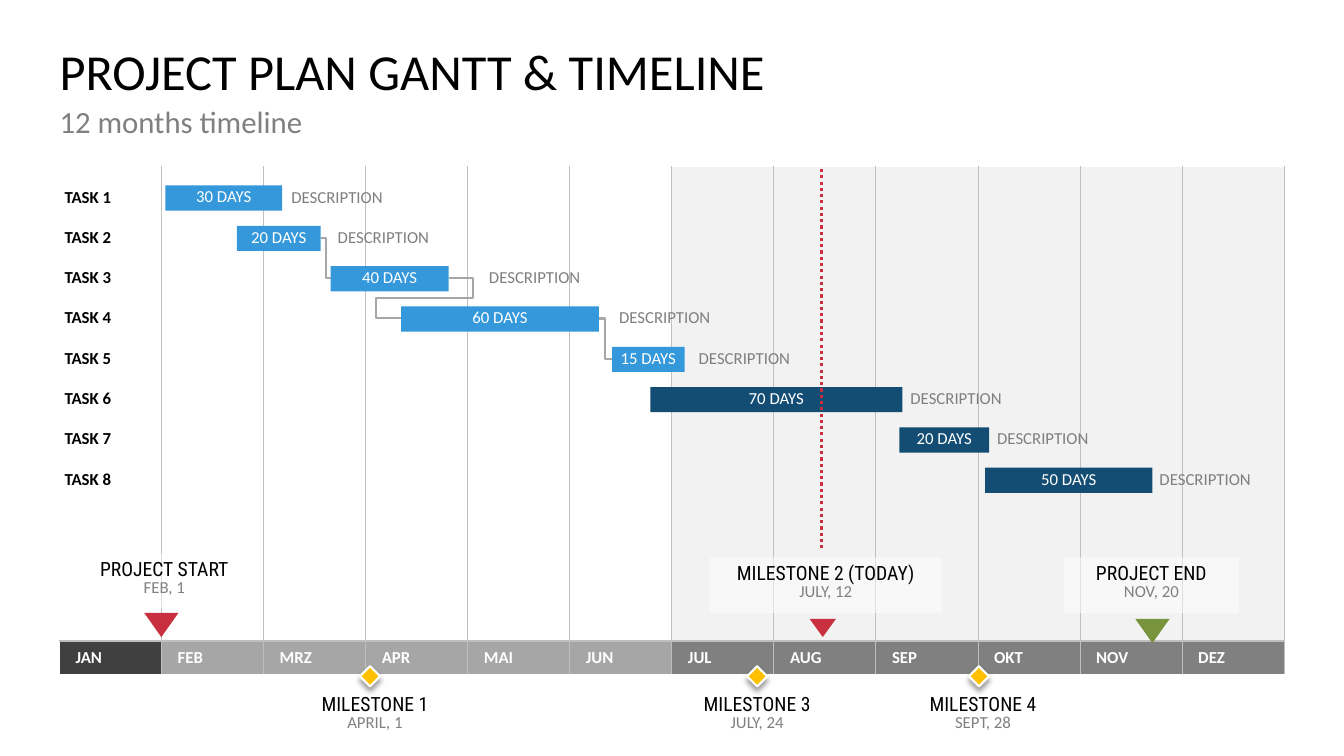
from lxml.etree import SubElement, fromstring
from pptx import Presentation
from pptx.dml.color import RGBColor
from pptx.enum.dml import MSO_LINE
from pptx.enum.shapes import MSO_CONNECTOR, MSO_SHAPE
from pptx.enum.text import MSO_ANCHOR, MSO_AUTO_SIZE, PP_ALIGN
from pptx.oxml.ns import nsdecls, qn
from pptx.util import Inches, Pt

COLORS = {
    "black": "000000", "white": "FFFFFF", "gray": "808080", "desc": "7F7F7F",
    "border": "BFBFBF", "link": "A6A6A6", "shade": "F2F2F2",
    "jan": "404040", "half1": "A6A6A6", "half2": "808080",
    "blue": "3498DB", "navy": "144D73",
    "red": "C8303F", "green": "77933C", "amber": "FFC000",
}
C = {name: RGBColor.from_string(value) for name, value in COLORS.items()}

prs = Presentation()
prs.slide_width, prs.slide_height = Inches(13.33), Inches(7.5)
s = prs.slides.add_slide(prs.slide_layouts[5])


def write(tf, lines, align=PP_ALIGN.LEFT, anchor=MSO_ANCHOR.TOP,
          spacing=0.9, after=10, margins=(0, 0, 0, 0), wrap=True):
    """Fill a frame with lines of (text, size, colour, bold, font)."""
    tf.auto_size = MSO_AUTO_SIZE.NONE
    tf.word_wrap = wrap
    tf.vertical_anchor = anchor
    tf.margin_left, tf.margin_top, tf.margin_right, tf.margin_bottom = map(Inches, margins)
    p = tf.paragraphs[0]
    p.text = "\v".join(line[0] for line in lines)
    p.alignment, p.line_spacing, p.space_after = align, spacing, Pt(after)
    for r, (_, size, color, bold, font) in zip(p.runs, lines):
        r.font.size, r.font.bold, r.font.name = Pt(size), bold, font
        r.font.color.rgb = C[color]
    for br in p._p.findall(qn("a:br")):
        SubElement(br, qn("a:rPr")).set("sz", str(lines[0][1] * 100))


def add_box(kind, left, top, width, height, fill=None):
    sp = s.shapes.add_shape(kind, Inches(left), Inches(top), Inches(width), Inches(height))
    sp.shadow.inherit = False
    sp.line.fill.background()
    if fill:
        sp.fill.solid()
        sp.fill.fore_color.rgb = C[fill]
    else:
        sp.fill.background()
    return sp


# Title and subtitle
title = s.shapes.title
title.left, title.top, title.width, title.height = map(Inches, (0.59, 0.47, 12.15, 1.18))
write(title.text_frame, [("PROJECT PLAN GANTT & TIMELINE", 36, "black", False, "Calibri")], after=0)
subtitle = s.shapes.add_textbox(Inches(0.59), Inches(1.06), Inches(12.15), Inches(0.59))
write(subtitle.text_frame, [("12 months timeline", 22, "gray", False, "Calibri")])

# Calendar table: a tall grid row above the month row
months = ["JAN", "FEB", "MRZ", "APR", "MAI", "JUN", "JUL", "AUG", "SEP", "OKT", "NOV", "DEZ"]
frame = s.shapes.add_table(2, len(months), Inches(0.59), Inches(1.65), Inches(12.15), Inches(5.04))
table = frame.table
table.first_row = table.horz_banding = False
table.rows[0].height, table.rows[1].height = Inches(4.71), Inches(0.33)
for col, month in enumerate(months):
    table.columns[col].width = Inches(12.15 / len(months))
    for row in range(2):
        cell = table.cell(row, col)
        if row == 0 and col < 6:
            cell.fill.background()
        else:
            cell.fill.solid()
            band = "jan" if col == 0 else "half1" if col < 6 else "half2"
            cell.fill.fore_color.rgb = C[band if row else "shade"]
        borders = [
            ("lnL", "border" if col else "white", 0.75 if col else 1),
            ("lnR", "border", 0.75),
            ("lnT", "border" if row else "white", 1),
            ("lnB", "white" if row else "border", 1),
        ]
        for i, (tag, color, width) in enumerate(borders):
            cell._tc.get_or_add_tcPr().insert(i, fromstring(
                f'<a:{tag} {nsdecls("a")} w="{Pt(width)}"><a:solidFill>'
                f'<a:srgbClr val="{COLORS[color]}"/></a:solidFill></a:{tag}>'))
    cell.vertical_anchor = MSO_ANCHOR.MIDDLE
    cell.margin_left, cell.margin_top = Inches(0.16), Inches(0.01)
    cell.margin_right, cell.margin_bottom = Inches(0.01), 0
    cell.text_frame.text = month
    r = cell.text_frame.paragraphs[0].runs[0]
    r.font.size, r.font.bold, r.font.name = Pt(12), True, "Calibri"
    r.font.color.rgb = C["white"]

# Markers above the month row
for left, top, width, height, color in [
    (1.43, 6.08, 0.34, 0.24, "red"),
    (8.03, 6.14, 0.26, 0.18, "red"),
    (11.26, 6.14, 0.34, 0.24, "green"),
]:
    marker = add_box(MSO_SHAPE.ISOSCELES_TRIANGLE, left, top, width, height, color)
    marker.rotation = 180

# Half-transparent callouts above the markers
for left, top, width, name, date in [
    (0.76, 5.49, 1.74, "PROJECT START", "FEB, 1"),
    (10.55, 5.53, 1.74, "PROJECT END", "NOV, 20"),
    (7.04, 5.53, 2.3, "MILESTONE 2 (TODAY)", "JULY, 12"),
]:
    callout = add_box(MSO_SHAPE.RECTANGLE, left, top, width, 0.55, "white")
    fill = callout._element.spPr.find(qn("a:solidFill"))
    SubElement(fill[0], qn("a:alpha")).set("val", "50000")
    write(callout.text_frame,
          [(name, 14, "black", False, "Roboto Condensed"), (date, 12, "gray", False, "Calibri")],
          PP_ALIGN.CENTER, MSO_ANCHOR.BOTTOM, 0.8, 0, (0, 0.08, 0, 0.12))

# Milestones below the month row
for text_left, diamond_left, name, date in [
    (2.87, 3.57, "MILESTONE 1", "APRIL, 1"),
    (6.66, 7.41, "MILESTONE 3", "JULY, 24"),
    (8.9, 9.61, "MILESTONE 4", "SEPT, 28"),
]:
    label = s.shapes.add_textbox(Inches(text_left), Inches(6.91), Inches(1.7), Inches(0.35))
    write(label.text_frame,
          [(name, 14, "black", False, "Roboto Condensed"), (date, 12, "gray", False, "Calibri")],
          PP_ALIGN.CENTER, spacing=0.8)
    diamond = add_box(MSO_SHAPE.DIAMOND, diamond_left, 6.61, 0.2, 0.2, "amber")
    diamond.line.color.rgb, diamond.line.width = C["white"], Pt(1.5)
    diamond._element.spPr.find(qn("a:effectLst")).append(fromstring(
        f'<a:outerShdw {nsdecls("a")} blurRad="{Pt(4)}" dist="{Pt(3)}" dir="5400000" '
        'rotWithShape="0"><a:srgbClr val="000000"><a:alpha val="40000"/></a:srgbClr></a:outerShdw>'))

# Task rows: bar left, bar width, days, description left, colour
ROW_TOP, ROW_STEP = 1.8, 0.4
tasks = [
    (1.64, 1.16, 30, 2.89, "blue"),
    (2.35, 0.83, 20, 3.35, "blue"),
    (3.28, 1.17, 40, 4.85, "blue"),
    (3.98, 1.96, 60, 6.14, "blue"),
    (6.07, 0.72, 15, 6.93, "blue"),
    (6.45, 2.5, 70, 9.03, "navy"),
    (8.92, 0.89, 20, 9.89, "navy"),
    (9.77, 1.66, 50, 11.5, "navy"),
]
for i, (left, width, days, desc_left, color) in enumerate(tasks):
    top = ROW_TOP + i * ROW_STEP
    task = add_box(MSO_SHAPE.ROUNDED_RECTANGLE, 0.64, top, 0.79, 0.32)
    task.adjustments[0] = 0
    write(task.text_frame, [(f"TASK {i + 1}", 12, "black", True, "Calibri")], anchor=MSO_ANCHOR.MIDDLE)
    bar = add_box(MSO_SHAPE.RECTANGLE, left, top + 0.04, width, 0.25, color)
    write(bar.text_frame, [(f"{days} DAYS", 12, "white", False, "Calibri")], PP_ALIGN.CENTER,
          MSO_ANCHOR.MIDDLE, 0.8, margins=(0.1, 0.05, 0.1, 0.05), wrap=False)
    desc = s.shapes.add_textbox(Inches(desc_left), Inches(top), Inches(1.04), Inches(0.32))
    write(desc.text_frame, [("DESCRIPTION", 12, "desc", False, "Calibri")], anchor=MSO_ANCHOR.MIDDLE)

# Links from the end of tasks 2, 3 and 4 to the start of the next, and the today line
lines = []
for i in (1, 2, 3):
    y = ROW_TOP + 0.16 + i * ROW_STEP
    lines.append((MSO_CONNECTOR.ELBOW, tasks[i][0] + tasks[i][1], y,
                  tasks[i + 1][0], y + ROW_STEP, "link", 1.5))
lines.append((MSO_CONNECTOR.STRAIGHT, 8.15, 5.44, 8.15, 1.68, "red", 2.25))
for kind, x1, y1, x2, y2, color, width in lines:
    line = s.shapes.add_connector(kind, Inches(x1), Inches(y1), Inches(x2), Inches(y2))
    line.line.color.rgb, line.line.width = C[color], Pt(width)
    SubElement(line._element.spPr, qn("a:effectLst"))
    if color == "red":
        line.line.dash_style = MSO_LINE.ROUND_DOT
    elif x2 < x1:  # the next task starts earlier, so the link loops back
        geom = line._element.spPr.find(qn("a:prstGeom"))
        geom.set("prst", "bentConnector5")
        for n, value in enumerate((-52400, 50000, 152400), 1):
            gd = SubElement(geom.find(qn("a:avLst")), qn("a:gd"))
            gd.set("name", f"adj{n}")
            gd.set("fmla", f"val {value}")

prs.save("out.pptx")
